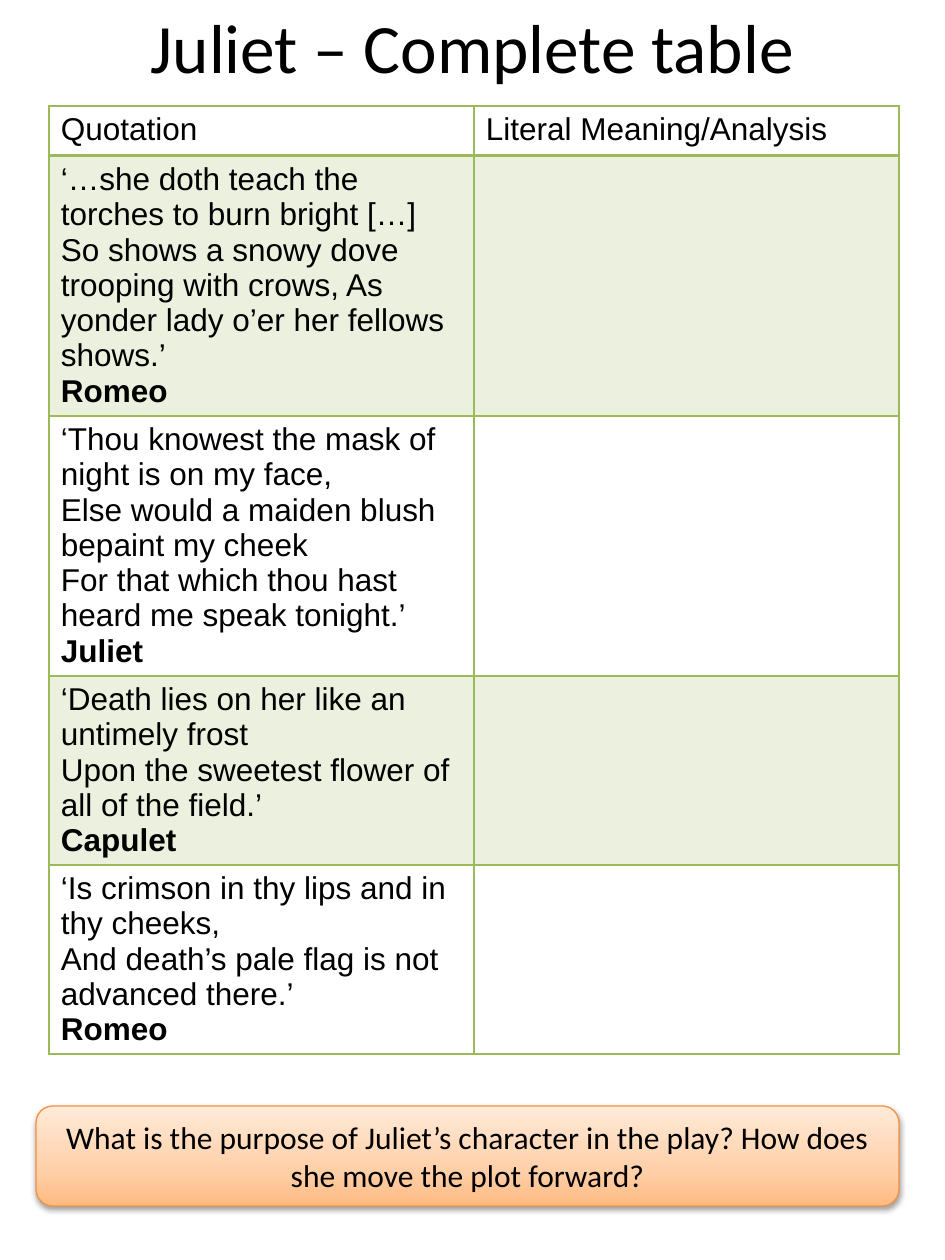
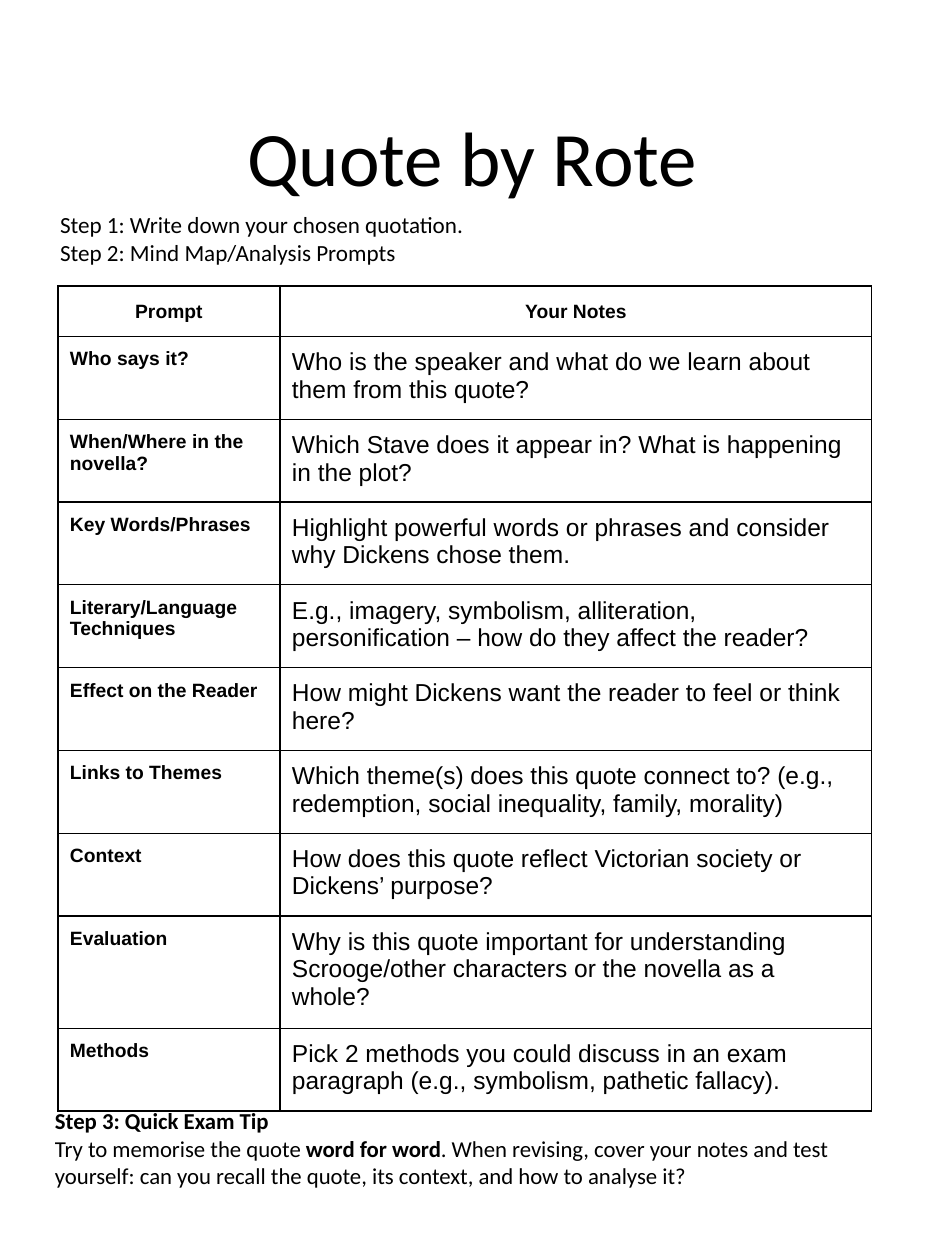
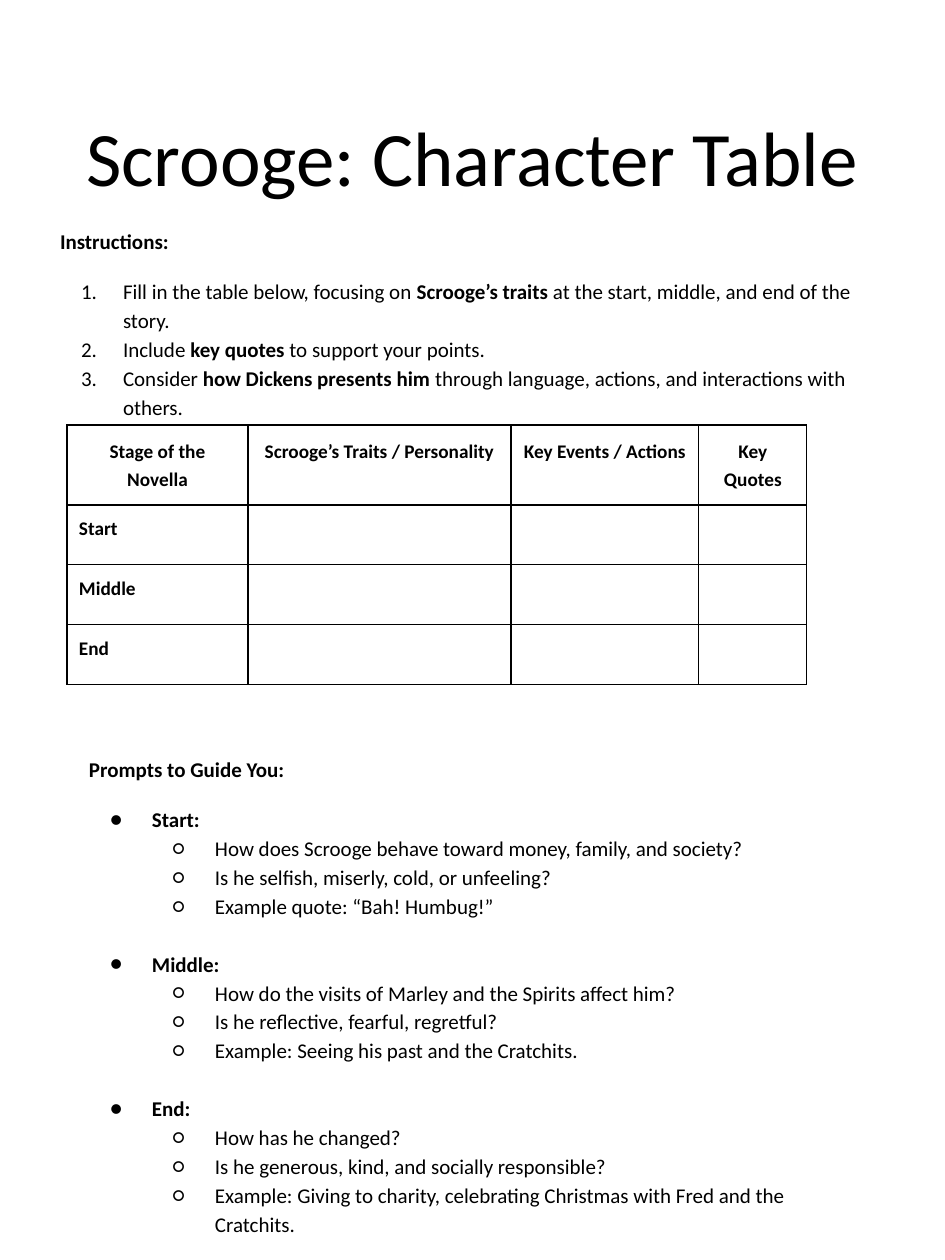
from dataclasses import dataclass, replace

from lxml.etree import SubElement
from pptx import Presentation
from pptx.dml.color import RGBColor
from pptx.enum.shapes import MSO_SHAPE
from pptx.enum.text import MSO_ANCHOR, MSO_AUTO_SIZE, PP_ALIGN
from pptx.oxml.ns import qn
from pptx.util import Emu, Pt


@dataclass(frozen=True)
class Theme:
    ink: str = "000000"
    paper: str = "FFFFFF"
    green: str = "9BBB59"
    band: str = "EBF1DE"
    edge: str = "F5913F"
    glow: tuple = ((0, "FFBB82"), (35, "FFCFA8"), (100, "FFEBD9"))
    sans: str = "Calibri"
    plain: str = "Arial"
    title: float = 44
    slim: float = 39.6
    large: float = 18
    note: float = 14
    step: float = 13.2
    tip: float = 13
    text: float = 12
    label: float = 11


@dataclass(frozen=True)
class Style:
    size: float
    font: str = Theme.sans
    bold: bool = False
    align: PP_ALIGN = PP_ALIGN.LEFT
    line: float = 1.0
    before: float = 0
    bullet: str = ""
    level: int = 0


@dataclass(frozen=True)
class Look:
    head: Style
    body: tuple
    pad: tuple = (12, 12)
    edge: str = Theme.ink
    thin: float = 0.75
    rule: float = 0.75
    band: str = Theme.paper


T = Theme()
TITLE = (47, 51, 851, 210)


def px(n):
    return Emu(round(n * 914400 / 126))


def rgb(code):
    return RGBColor.from_string(code)


def node(parent, tag, **attrs):
    return SubElement(parent, qn(tag), {k: str(v) for k, v in attrs.items()})


def tint(parent, code):
    return node(parent, "a:srgbClr", val=code)


# Text: a * switches bold on and off

def mark(para, style):
    props = para._p.get_or_add_pPr()
    props.set("marL", str(px(63 * (style.level + 1))))
    props.set("indent", str(px(-42)))
    tint(node(props, "a:buClr"), T.ink)
    node(props, "a:buFont", typeface=style.font)
    if style.bullet == "1.":
        node(props, "a:buAutoNum", type="arabicPeriod")
    else:
        node(props, "a:buChar", char=style.bullet)


def write(para, text, style):
    para.alignment = style.align
    para.line_spacing = style.line
    para.space_before = Pt(style.before)
    para.level = style.level
    if style.bullet:
        mark(para, style)
    for i, part in enumerate(text.split("*")):
        if part:
            run = para.add_run()
            run.text = part
            font = run.font
            font.name, font.size = style.font, Pt(style.size)
            font.bold = style.bold != bool(i % 2)
            font.color.rgb = rgb(T.ink)
    if not text:
        node(para._p, "a:endParaRPr", sz=round(style.size * 100))


def fill(frame, lines):
    for i, (text, style) in enumerate(lines):
        para = frame.add_paragraph() if i else frame.paragraphs[0]
        write(para, text, style)


def pad(part, side, top):
    part.margin_left = part.margin_right = px(side)
    part.margin_top = part.margin_bottom = px(top)


def head(slide, text, box, size, lift=0):
    shape = slide.shapes.title
    shape.left, shape.top, shape.width, shape.height = map(px, box)
    frame = shape.text_frame
    frame.auto_size = MSO_AUTO_SIZE.NONE
    frame.vertical_anchor = MSO_ANCHOR.MIDDLE
    pad(frame, 12, 6)
    frame.margin_bottom = px(6 + lift)
    fill(frame, [(text, Style(size, align=PP_ALIGN.CENTER))])


def block(slide, box, lines, top=6):
    frame = slide.shapes.add_textbox(*map(px, box)).text_frame
    frame.word_wrap = True
    pad(frame, 12, top)
    fill(frame, lines)


# Tables

def border(cell, look, row):
    props = cell._tc.get_or_add_tcPr()
    weights = {"L": look.thin, "R": look.thin,
               "T": look.rule if row == 1 else look.thin,
               "B": look.rule if row == 0 else look.thin}
    for side, weight in weights.items():
        line = node(props, f"a:ln{side}", w=Pt(weight))
        tint(node(line, "a:solidFill"), look.edge)


def grid(slide, spot, cols, heights, rows, look):
    size = sum(cols), sum(heights)
    table = slide.shapes.add_table(len(rows), len(cols),
                                   *map(px, spot + size)).table
    table.first_row = table.horz_banding = False
    for col, width in zip(table.columns, cols):
        col.width = px(width)
    for r, (row, height) in enumerate(zip(rows, heights)):
        table.rows[r].height = px(height)
        for c, text in enumerate(row):
            cell = table.cell(r, c)
            border(cell, look, r)
            cell.fill.solid()
            cell.fill.fore_color.rgb = rgb(look.band if r % 2 else T.paper)
            pad(cell, *look.pad)
            style = look.body[c] if r else look.head
            fill(cell.text_frame, [(t, style) for t in text.split("\n")])


# Question panel with gradient and soft shadow

def panel(slide, box, text):
    shape = slide.shapes.add_shape(MSO_SHAPE.ROUNDED_RECTANGLE, *map(px, box))
    shape.fill.gradient()
    shape.fill.gradient_angle = 90
    props = shape._element.spPr
    stops = props.find(".//" + qn("a:gsLst"))
    for stop in list(stops):
        stops.remove(stop)
    for pos, code in T.glow:
        tint(node(stops, "a:gs", pos=pos * 1000), code)
    shape.line.color.rgb = rgb(T.edge)
    shape.line.width = Pt(0.75)
    shape.shadow.inherit = False
    shade = node(props.find(qn("a:effectLst")), "a:outerShdw",
                 blurRad=Pt(3.1), dist=Pt(1.6), dir=5400000, rotWithShape=0)
    node(tint(shade, T.ink), "a:alpha", val=37000)
    frame = shape.text_frame
    frame.word_wrap = True
    frame.vertical_anchor = MSO_ANCHOR.MIDDLE
    pad(frame, 12, 6)
    fill(frame, [(text, Style(T.large, align=PP_ALIGN.CENTER))])


# Slides

def juliet(slide):
    head(slide, "Juliet – Complete table", (47, 30, 851, 113), T.slim, 82)
    body = Style(T.large, T.plain)
    look = Look(body, (body, body), (12, 6), T.green, 1, 2, T.band)
    quotes = [
        "‘…she doth teach the torches to burn bright […]\n"
        "So shows a snowy dove trooping with crows, As yonder lady o’er "
        "her fellows shows.’\n*Romeo*",
        "‘Thou knowest the mask of night is on my face,\n"
        "Else would a maiden blush bepaint my cheek\n"
        "For that which thou hast heard me speak tonight.’\n*Juliet*",
        "‘Death lies on her like an untimely frost\n"
        "Upon the sweetest flower of all of the field.’\n*Capulet*",
        "‘Is crimson in thy lips and in thy cheeks,\n"
        "And death’s pale flag is not advanced there.’\n*Romeo*",
    ]
    rows = [("Quotation", "Literal Meaning/Analysis")]
    rows += [(quote, "") for quote in quotes]
    grid(slide, (49, 106), (425, 425), (50, 260, 260, 189, 189), rows, look)
    panel(slide, (36, 1106, 863, 100),
          "What is the purpose of Juliet’s character in the play? "
          "How does she move the plot forward?")


def rote(slide):
    head(slide, "Quote by Rote", TITLE, T.title)
    step = Style(T.step, line=0.8, before=3)
    block(slide, (48, 210, 851, 832), [
        ("Step 1: Write down your chosen quotation.", step),
        ("Step 2: Mind Map/Analysis Prompts", step)])
    label = Style(T.label, T.plain, True)
    top = replace(label, align=PP_ALIGN.CENTER, line=1.15)
    look = Look(top, (label, Style(T.note, T.plain)))
    rows = [
        ("Prompt", "Your Notes"),
        ("Who says it?",
         "Who is the speaker and what do we learn about them from this quote?"),
        ("When/Where in the novella?",
         "Which Stave does it appear in? What is happening in the plot?"),
        ("Key Words/Phrases",
         "Highlight powerful words or phrases and consider why Dickens "
         "chose them."),
        ("Literary/Language Techniques",
         "E.g., imagery, symbolism, alliteration, personification – "
         "how do they affect the reader?"),
        ("Effect on the Reader",
         "How might Dickens want the reader to feel or think here?"),
        ("Links to Themes",
         "Which theme(s) does this quote connect to? (e.g., redemption, "
         "social inequality, family, morality)"),
        ("Context",
         "How does this quote reflect Victorian society or Dickens’ purpose?"),
        ("Evaluation",
         "Why is this quote important for understanding Scrooge/other "
         "characters or the novella as a whole?"),
        ("Methods",
         "Pick 2 methods you could discuss in an exam paragraph "
         "(e.g., symbolism, pathetic fallacy)."),
    ]
    grid(slide, (58, 286), (222, 592), [50] + [80] * 7 + [108, 80], rows, look)
    tip = Style(T.tip)
    block(slide, (43, 1094, 829, 87), [
        ("*Step 3: Quick Exam Tip*", tip),
        ("Try to memorise the quote *word for word*. When revising, cover "
         "your notes and test yourself: can you recall the quote, its "
         "context, and how to analyse it?", tip)], 13)


def scrooge(slide):
    head(slide, "Scrooge: Character Table", TITLE, T.title)
    text = Style(T.text, line=1.15)
    lead = replace(text, bold=True, before=14)
    item = replace(text, bullet="1.")
    block(slide, (48, 219, 851, 832), [
        ("Instructions:", lead),
        ("Fill in the table below, focusing on *Scrooge’s traits* at the "
         "start, middle, and end of the story.", replace(item, before=12)),
        ("Include *key quotes* to support your points.", item),
        ("Consider *how Dickens presents him* through language, actions, "
         "and interactions with others.", item)])
    label = Style(T.label, bold=True)
    look = Look(replace(label, align=PP_ALIGN.CENTER, line=1.15), (label,) * 4)
    rows = [("Stage of the Novella", "Scrooge’s Traits / Personality",
             "Key Events / Actions", "Key Quotes")]
    rows += [(stage, "", "", "") for stage in ("Start", "Middle", "End")]
    grid(slide, (67, 425), (181, 263, 188, 108), (80, 60, 60, 60), rows, look)

    # Prompts for each stage
    stages = {
        "Start:": (
            "How does Scrooge behave toward money, family, and society?",
            "Is he selfish, miserly, cold, or unfeeling?",
            "Example quote: “Bah! Humbug!”"),
        "Middle:": (
            "How do the visits of Marley and the Spirits affect him?",
            "Is he reflective, fearful, regretful?",
            "Example: Seeing his past and the Cratchits."),
        "End:": (
            "How has he changed?",
            "Is he generous, kind, and socially responsible?",
            "Example: Giving to charity, celebrating Christmas with Fred "
            "and the Cratchits."),
    }
    sub = replace(text, bullet="○", level=1)
    lines = [("Prompts to Guide You:", lead)]
    for i, (stage, hints) in enumerate(stages.items()):
        gap = 16.3 if i else 12
        lines.append((stage, replace(text, bold=True, bullet="●", before=gap)))
        lines += [(hint, sub) for hint in hints]
    block(slide, (77, 740, 724, 140), lines, 13)


def main():
    deck = Presentation()
    deck.slide_width, deck.slide_height = px(945), px(1260)
    for build in (juliet, rote, scrooge):
        build(deck.slides.add_slide(deck.slide_layouts[5]))
    deck.save("out.pptx")


if __name__ == "__main__":
    main()
